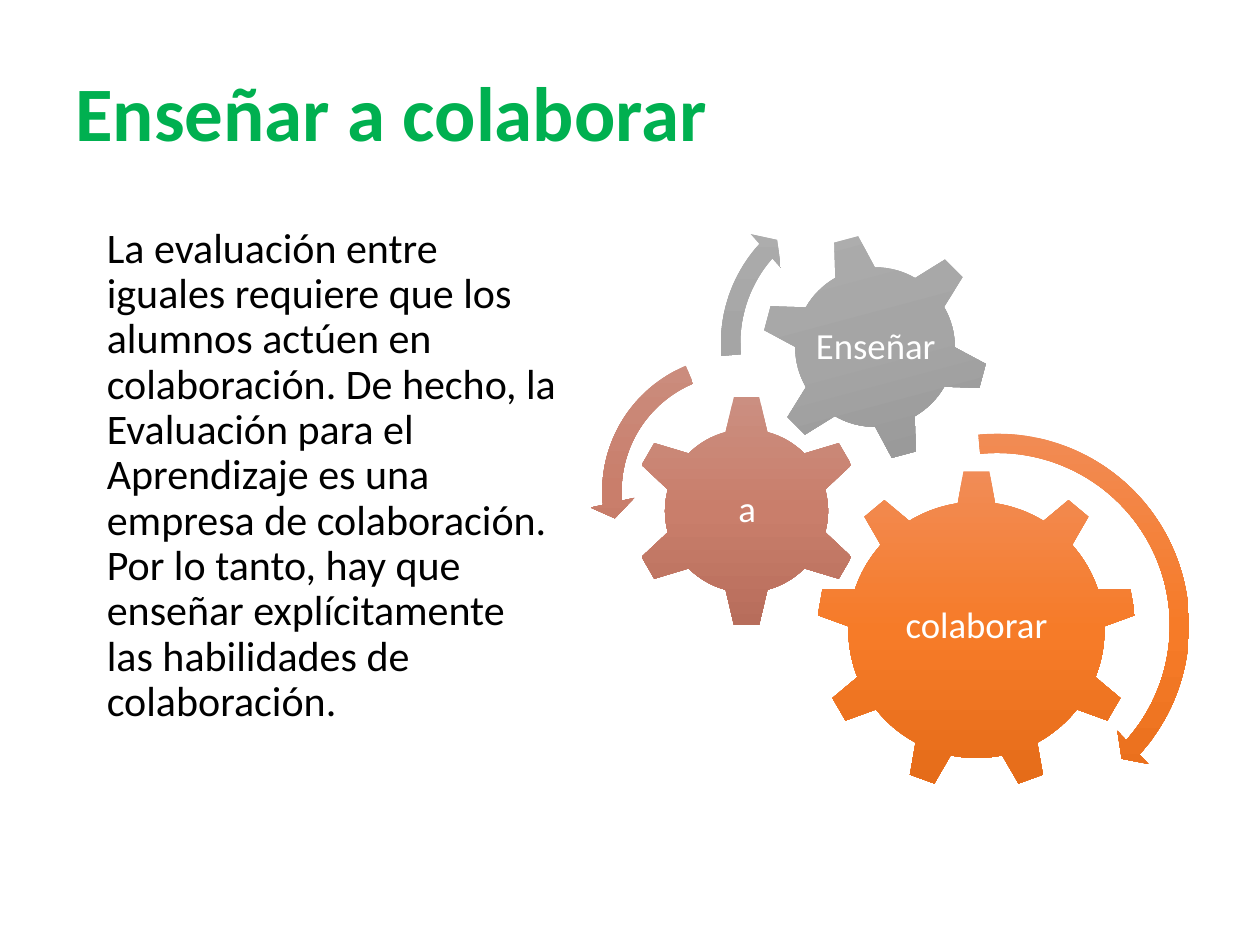
from lxml import etree
from pptx import Presentation
from pptx.dml.color import RGBColor
from pptx.enum.shapes import MSO_SHAPE as G
from pptx.enum.text import MSO_ANCHOR, PP_ALIGN
from pptx.oxml.ns import nsdecls
from pptx.util import Inches, Pt

FONT = "Calibri"
TITLE = "Enseñar a colaborar"
BODY = ("\tLa evaluación entre iguales requiere que los alumnos actúen en "
        "colaboración. De hecho, la Evaluación para el Aprendizaje es una "
        "empresa de colaboración. Por lo tanto, hay que enseñar "
        "explícitamente las habilidades de colaboración.")

ORANGE = ("F18C57", "F67B28", "E56C19")
RUST = ("CB8F81", "C97E6B", "B76D5B")
GREY = ("AFAFAF", "A5A5A5", "939393")

# preset, left, top, side, rotation, gradient, label, label box
GEARS = [
    (G.GEAR_9, 6.48, 3.73, 2.54, 0, ORANGE, "colaborar", (6.99, 4.32, 1.52, 1.31)),
    (G.GEAR_6, 5, 3.13, 1.85, 0, RUST, "a", (5.47, 3.6, 0.92, 0.91)),
    (G.GEAR_6, 6.04, 1.85, 1.81, 345, GREY, "Enseñar", (6.44, 2.25, 1.02, 1.02)),
]
# preset, left, top, side, gradient, adjustments
ARROWS = [
    (G.CIRCULAR_ARROW, 6.29, 3.34, 3.25, ORANGE, (0.047, 2.99, 25.17, 158.595, 0.055)),
    (G.LEFT_CIRCULAR_ARROW, 4.68, 2.72, 2.36, RUST, (0.065, 4.3, 104.891, 148.378, 0.075)),
    (G.CIRCULAR_ARROW, 5.62, 1.45, 2.55, GREY, (0.06, 3.941, 133.138, 105.082, 0.07)),
]


def add_text(shapes, box, text, size, color, bold=False, anchor=MSO_ANCHOR.TOP,
             align=PP_ALIGN.LEFT, inset=None):
    """Add a wrapped one-paragraph text box and return its paragraph."""
    tf = shapes.add_textbox(*map(Inches, box)).text_frame
    tf.word_wrap = True
    tf.vertical_anchor = anchor
    if inset is not None:
        tf.margin_left = tf.margin_right = Inches(inset)
        tf.margin_top = tf.margin_bottom = Inches(inset)
    p = tf.paragraphs[0]
    p.alignment = align
    p.line_spacing = 0.9
    r = p.add_run()
    r.text = text
    r.font.name = FONT
    r.font.size = Pt(size)
    r.font.bold = bold
    r.font.color.rgb = RGBColor.from_string(color)
    return p


def add_gradient_shape(shapes, preset, left, top, side, colors):
    """Add a square, unlined shape shaded from top to bottom."""
    sp = shapes.add_shape(preset, *map(Inches, (left, top, side, side)))
    sp.shadow.inherit = False
    sp.line.fill.background()
    stops = "".join(
        f'<a:gs pos="{i * 50000}"><a:srgbClr val="{c}"/></a:gs>'
        for i, c in enumerate(colors))
    fill = etree.fromstring(
        f'<a:gradFill {nsdecls("a")} rotWithShape="1"><a:gsLst>{stops}</a:gsLst>'
        '<a:lin ang="5400000" scaled="0"/></a:gradFill>')
    sp._element.spPr.prstGeom.addnext(fill)
    return sp


def main():
    prs = Presentation()
    prs.slide_width, prs.slide_height = Inches(10), Inches(7.5)
    s = prs.slides.add_slide(prs.slide_layouts[6])

    add_text(s.shapes, (0.5, 0.3, 9, 1.25), TITLE, 44, "00B050", bold=True,
             anchor=MSO_ANCHOR.MIDDLE)
    p = add_text(s.shapes, (0.5, 1.75, 4.03, 4.95), BODY, 24, "000000")
    p.space_before = Pt(10)
    pPr = p._p.get_or_add_pPr()
    pPr.set("marL", str(Inches(0.25)))
    pPr.set("indent", str(-Inches(0.25)))

    diagram = s.shapes.add_group_shape().shapes
    for preset, left, top, side, rotation, colors, label, box in GEARS:
        gear = add_gradient_shape(diagram, preset, left, top, side, colors)
        gear.rotation = rotation
        add_text(diagram, box, label, 21, "FFFFFF", anchor=MSO_ANCHOR.MIDDLE,
                 align=PP_ALIGN.CENTER, inset=0.03)
    for preset, left, top, side, colors, adjustments in ARROWS:
        arrow = add_gradient_shape(diagram, preset, left, top, side, colors)
        for i, value in enumerate(adjustments):
            arrow.adjustments[i] = value

    prs.save("out.pptx")


if __name__ == "__main__":
    main()
